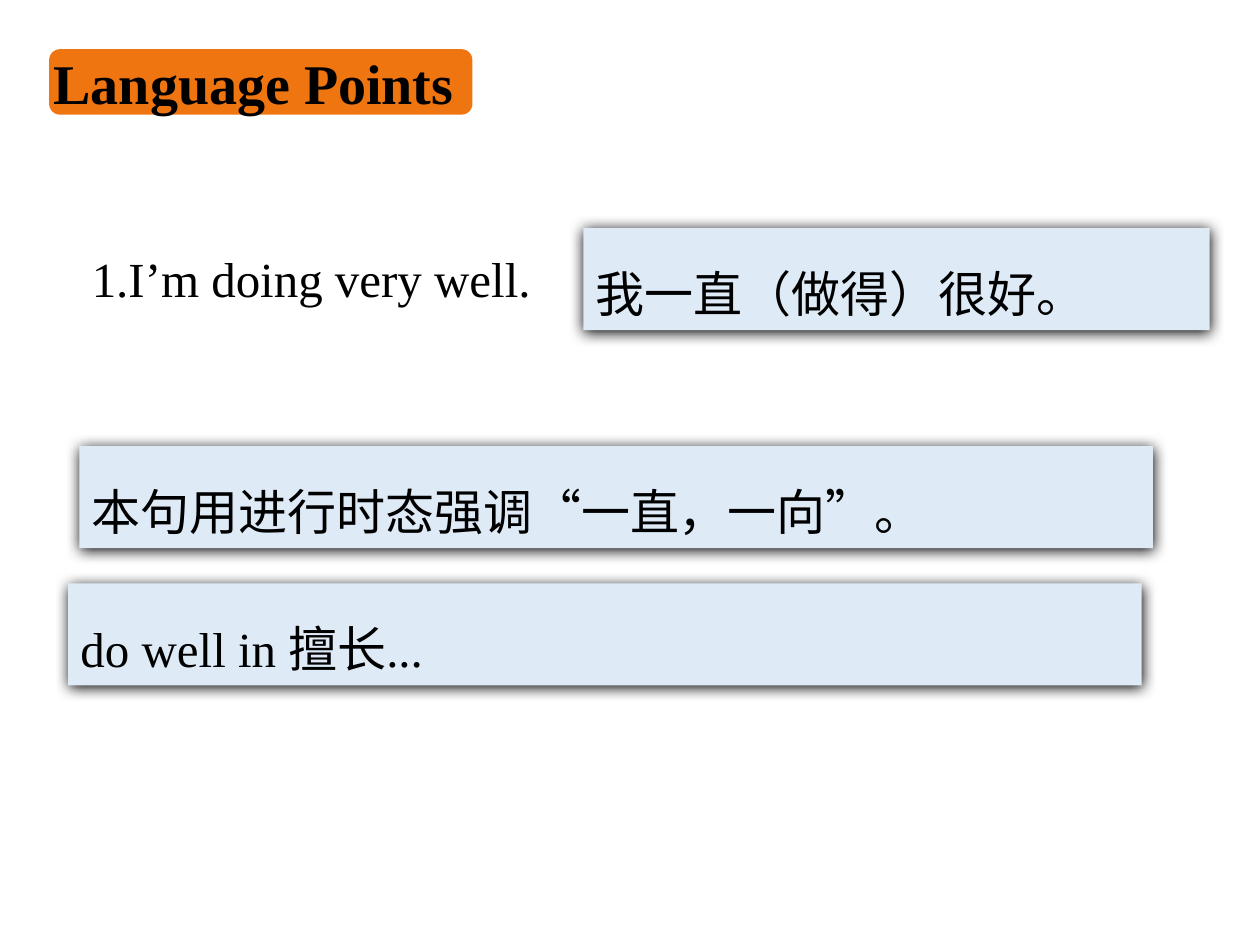
from lxml import etree
from pptx import Presentation
from pptx.dml.color import RGBColor
from pptx.enum.shapes import MSO_SHAPE
from pptx.enum.text import MSO_ANCHOR, MSO_AUTO_SIZE, PP_ALIGN
from pptx.oxml.ns import qn
from pptx.util import Inches, Pt

RECT, ROUND_RECT = MSO_SHAPE.RECTANGLE, MSO_SHAPE.ROUNDED_RECTANGLE
TOP, MIDDLE = MSO_ANCHOR.TOP, MSO_ANCHOR.MIDDLE
LEFT, CENTER = PP_ALIGN.LEFT, PP_ALIGN.CENTER
GROW, NO_FIT = MSO_AUTO_SIZE.SHAPE_TO_FIT_TEXT, MSO_AUTO_SIZE.NONE
BLACK = RGBColor(0x00, 0x00, 0x00)
ORANGE = RGBColor(0xEF, 0x75, 0x11)
PALE_BLUE = RGBColor(0xDE, 0xEB, 0xF7)
FONT = "Times New Roman"
ROW_H = 0.81


def write(sp, text, size=28, bold=False, align=LEFT, anchor=TOP, spacing=1.5,
          wrap=True, fit=GROW, margin_x=0.1, margin_y=0.05):
    tf = sp.text_frame
    tf.word_wrap = wrap
    tf.auto_size = fit
    tf.vertical_anchor = anchor
    tf.margin_left = tf.margin_right = Inches(margin_x)
    tf.margin_top = tf.margin_bottom = Inches(margin_y)
    p = tf.paragraphs[0]
    p.alignment = align
    p.line_spacing = spacing
    r = p.add_run()
    r.text = text
    r.font.name = FONT
    r.font.size = Pt(size)
    r.font.bold = bold
    r.font.color.rgb = BLACK


def add_shadow(sp):
    effects = sp.element.spPr.find(qn("a:effectLst"))
    shadow = etree.SubElement(effects, qn("a:outerShdw"), blurRad=str(Pt(8.5)),
                              dist=str(Pt(1)), dir="5400000", algn="ctr", rotWithShape="0")
    etree.SubElement(shadow, qn("a:srgbClr"), val=str(BLACK))


prs = Presentation()
prs.slide_width, prs.slide_height = Inches(10), Inches(7.5)
s = prs.slides.add_slide(prs.slide_layouts[5])

title_box = [Inches(v) for v in (0.39, 0.39, 3.36, 0.52)]
badge = s.shapes.add_shape(ROUND_RECT, *title_box)
badge.shadow.inherit = False
badge.fill.solid()
badge.fill.fore_color.rgb = ORANGE
badge.line.fill.background()

title = s.shapes.title
title.left, title.top, title.width, title.height = title_box
title.element.addprevious(badge.element)
write(title, "Language Points ", size=32, bold=True, align=CENTER, anchor=MIDDLE,
      spacing=1.0, wrap=False, fit=NO_FIT, margin_x=0, margin_y=0)

sentence = s.shapes.add_textbox(Inches(0.63), Inches(1.69), Inches(8.98), Inches(ROW_H))
write(sentence, "1.I’m doing very well.")

notes = [
    (0.63, 3.54, 8.52, "本句用进行时态强调“一直，一向”。"),
    (4.63, 1.81, 4.97, "我一直（做得）很好。"),
    (0.54, 4.63, 8.52, "do well in 擅长..."),
]
for left, top, width, text in notes:
    sp = s.shapes.add_shape(RECT, Inches(left), Inches(top), Inches(width), Inches(ROW_H))
    sp.shadow.inherit = False
    sp.fill.solid()
    sp.fill.fore_color.rgb = PALE_BLUE
    sp.line.fill.background()
    add_shadow(sp)
    write(sp, text)

prs.save("out.pptx")
